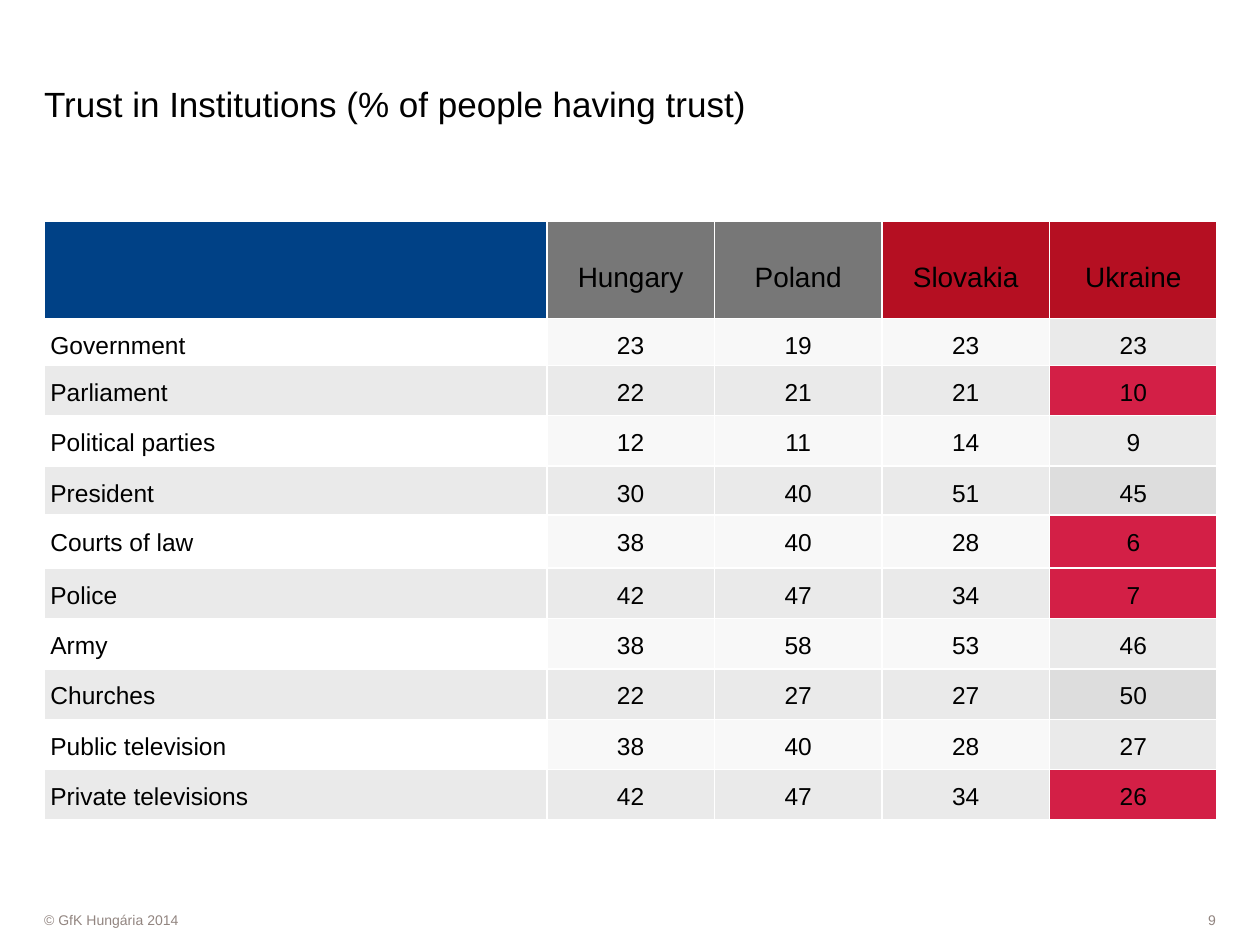
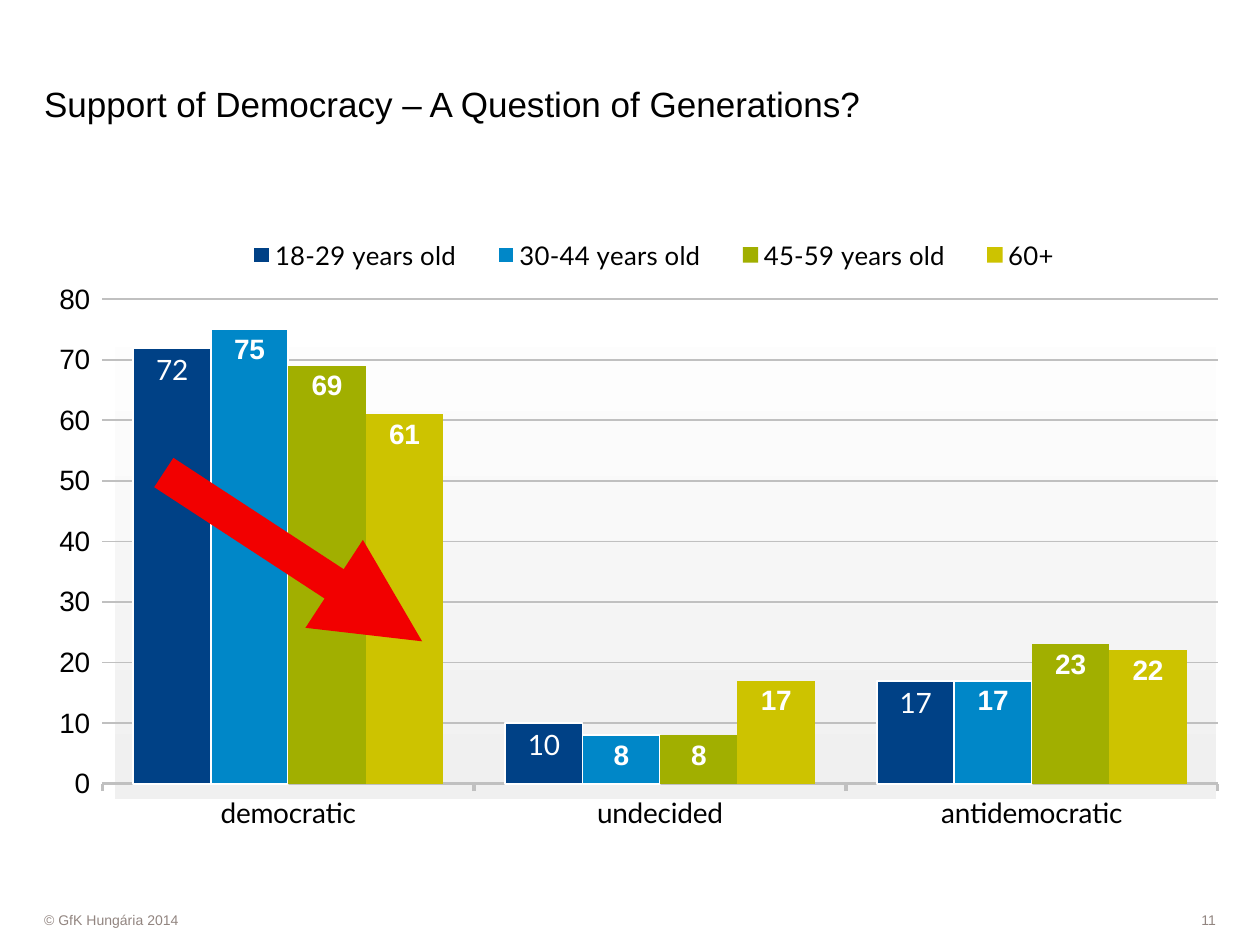
import pptx
import pptx.chart.data
import pptx.dml.color
import pptx.enum.chart
import pptx.enum.shapes
import pptx.enum.text
import pptx.oxml
import pptx.oxml.ns
import pptx.util

Inches, Pt = pptx.util.Inches, pptx.util.Pt
PP_ALIGN = pptx.enum.text.PP_ALIGN
ANCHOR = pptx.enum.text.MSO_ANCHOR
XL = pptx.enum.chart
SHAPE = pptx.enum.shapes.MSO_SHAPE

BLACK, WHITE = "000000", "FFFFFF"
MUTED, LINE_GRAY = "928580", "C0C0C0"
NAVY, GRAY, DARK_RED = "004186", "777777", "B50F22"
ALERT, ARROW_RED = "D31F46", "F20000"


def rgb(value):
    return pptx.dml.color.RGBColor.from_string(value)


def xml(tag, body="", attributes=""):
    names = pptx.oxml.ns.nsdecls("a", "c")
    return pptx.oxml.parse_xml(f"<{tag} {names} {attributes}>{body}</{tag}>")


class Deck:
    font = "Arial"
    left = 0.35

    def __init__(self):
        self.presentation = pptx.Presentation()
        self.presentation.slide_width = Inches(10)
        self.presentation.slide_height = Inches(7.5)
        self.slide = None

    def style(self, font, size, color=BLACK, name=None, bold=False):
        font.name = name or self.font
        font.size = Pt(size)
        font.bold = bold
        font.color.rgb = rgb(color)

    def frame(self, text_frame, text, size, color, align, anchor):
        text_frame.text = text
        text_frame.word_wrap = True
        text_frame.auto_size = pptx.enum.text.MSO_AUTO_SIZE.NONE
        text_frame.vertical_anchor = anchor
        text_frame.margin_left = text_frame.margin_right = 0
        text_frame.margin_top = text_frame.margin_bottom = 0
        paragraph = text_frame.paragraphs[0]
        paragraph.alignment = align
        self.style(paragraph.runs[0].font, size, color)

    def new_slide(self, title, number):
        layout = self.presentation.slide_layouts[5]
        self.slide = self.presentation.slides.add_slide(layout)
        heading = self.slide.shapes.title
        heading.left, heading.top = Inches(self.left), Inches(0.28)
        heading.width, heading.height = Inches(6.93), Inches(0.71)
        self.frame(heading.text_frame, title, 20, BLACK, PP_ALIGN.LEFT, ANCHOR.BOTTOM)
        self.footer(8.23, 1.42, str(number), PP_ALIGN.RIGHT)
        self.footer(self.left, 7.72, "© GfK Hungária 2014", PP_ALIGN.LEFT)

    def rectangle(self, left, top, width, height):
        shape = self.slide.shapes.add_shape(
            SHAPE.RECTANGLE, Inches(left), Inches(top), Inches(width), Inches(height))
        shape.shadow.inherit = False
        shape.line.fill.background()
        return shape

    def footer(self, left, width, text, align):
        band = self.rectangle(left, 7.22, width, 0.16)
        band.fill.solid()
        band.fill.fore_color.rgb = rgb(WHITE)
        self.frame(band.text_frame, text, 8, MUTED, align, ANCHOR.MIDDLE)

    def gradient_panel(self, left, top, width, height, bottom, upper):
        panel = self.rectangle(left, top, width, height)
        panel.fill.gradient()
        panel.fill.gradient_angle = 90
        for stop, (place, color) in zip(panel.fill.gradient_stops, ((0, bottom), (1, upper))):
            stop.position = place
            stop.color.rgb = rgb(color)

    def cell(self, cell, text, fill, size, align, anchor):
        properties = cell._tc.get_or_add_tcPr()
        for side in ("lnL", "lnR", "lnT", "lnB"):
            properties.append(xml(
                f"a:{side}", f'<a:solidFill><a:srgbClr val="{WHITE}"/></a:solidFill>', 'w="12700"'))
        cell.fill.solid()
        cell.fill.fore_color.rgb = rgb(fill)
        cell.margin_left = cell.margin_right = Inches(0.05)
        cell.margin_top = cell.margin_bottom = 0
        cell.vertical_anchor = anchor
        if text:
            cell.text = text
            paragraph = cell.text_frame.paragraphs[0]
            paragraph.alignment = align
            paragraph.line_spacing = 1.5
            self.style(paragraph.runs[0].font, size)

    def table(self, left, top, widths, heights, rows, fill_of):
        table = self.slide.shapes.add_table(
            len(heights), len(widths), Inches(left), Inches(top),
            Inches(sum(widths)), Inches(sum(heights))).table
        table.horz_banding = False
        for column, width in zip(table.columns, widths):
            column.width = Inches(width)
        for row, height in zip(table.rows, heights):
            row.height = Inches(height)
        for r, values in enumerate(rows):
            for c, value in enumerate(values):
                self.cell(table.cell(r, c), str(value), fill_of(r, c),
                          14 if r else 16,
                          PP_ALIGN.CENTER if c else PP_ALIGN.LEFT,
                          ANCHOR.TOP if r else ANCHOR.MIDDLE)

    def layout(self, element, x, y, width, height, inner=False):
        for old in element.findall(pptx.oxml.ns.qn("c:layout")):
            element.remove(old)
        parts = '<c:layoutTarget val="inner"/>' if inner else ""
        parts += '<c:xMode val="edge"/><c:yMode val="edge"/>'
        for tag, value in zip("xywh", (x, y, width, height)):
            parts += f'<c:{tag} val="{value}"/>'
        return xml("c:layout", f"<c:manualLayout>{parts}</c:manualLayout>")

    def column_chart(self, left, top, width, height, categories, series):
        data = pptx.chart.data.CategoryChartData(number_format="0")
        data.categories = categories
        for name, values, *_ in series:
            data.add_series(name, values)
        chart = self.slide.shapes.add_chart(
            XL.XL_CHART_TYPE.COLUMN_CLUSTERED, Inches(left), Inches(top),
            Inches(width), Inches(height), data).chart
        chart.has_title = False
        self.style(chart.font, 16, name="Lato")

        chart.has_legend = True
        legend = chart.legend
        legend.position = XL.XL_LEGEND_POSITION.TOP
        legend.include_in_layout = False
        self.style(legend.font, 14.7, name="Lato")
        legend._element.find(pptx.oxml.ns.qn("c:legendPos")).addnext(
            self.layout(legend._element, 0.16, 0.02, 0.72, 0.08))
        plot_area = chart._chartSpace.chart.plotArea
        plot_area.insert(0, self.layout(plot_area, 0.062, 0.13, 0.926, 0.763, True))

        category_axis, value_axis = chart.category_axis, chart.value_axis
        self.style(category_axis.tick_labels.font, 16, name="Lato")
        category_axis.major_tick_mark = XL.XL_TICK_MARK.OUTSIDE
        self.line(category_axis.format.line, LINE_GRAY, 2)
        self.style(value_axis.tick_labels.font, 16)
        value_axis.minimum_scale, value_axis.maximum_scale = 0, 80
        value_axis.major_unit = 10
        value_axis.format.line.fill.background()
        self.line(value_axis.major_gridlines.format.line, LINE_GRAY, 1)

        plot = chart.plots[0]
        plot.gap_width, plot.overlap = 80, 0
        plot.vary_by_categories = False
        for bars, (_, _, color, outlined, label_font) in zip(plot.series, series):
            bars.format.fill.solid()
            bars.format.fill.fore_color.rgb = rgb(color)
            if outlined:
                self.line(bars.format.line, WHITE, 1)
            labels = bars.data_labels
            labels.show_value = True
            labels.position = XL.XL_LABEL_POSITION.INSIDE_END
            labels.number_format = "0"
            labels.number_format_is_linked = False
            self.style(labels.font, 16, WHITE, label_font, label_font == "Arial")

    def line(self, line, color, width):
        line.color.rgb = rgb(color)
        line.width = Pt(width)

    def arrow(self, x1, y1, x2, y2, color, width):
        connector = self.slide.shapes.add_connector(
            pptx.enum.shapes.MSO_CONNECTOR.STRAIGHT,
            Inches(x1), Inches(y1), Inches(x2), Inches(y2))
        self.line(connector.line, color, width)
        connector.line._get_or_add_ln().append(xml("a:tailEnd", attributes='type="triangle"'))
        connector._element.spPr.append(xml("a:effectLst"))


TRUST = [
    ("", "Hungary", "Poland", "Slovakia", "Ukraine"),
    ("Government", 23, 19, 23, 23),
    ("Parliament", 22, 21, 21, 10),
    ("Political parties", 12, 11, 14, 9),
    ("President", 30, 40, 51, 45),
    ("Courts of law", 38, 40, 28, 6),
    ("Police", 42, 47, 34, 7),
    ("Army", 38, 58, 53, 46),
    ("Churches", 22, 27, 27, 50),
    ("Public television", 38, 40, 28, 27),
    ("Private televisions", 42, 47, 34, 26),
]
HEADER_FILLS = (NAVY, GRAY, GRAY, DARK_RED, DARK_RED)
ODD_FILLS = (WHITE, "F8F8F8", "F8F8F8", "F8F8F8", "EAEAEA")
EVEN_FILLS = ("EAEAEA",) * 4 + ("DDDDDD",)
LOW_TRUST = {"Parliament", "Courts of law", "Police", "Private televisions"}

GENERATIONS = [
    ("18-29 years old", (72, 10, 17), NAVY, True, "Lato"),
    ("30-44 years old", (75, 8, 17), "0087C8", True, "Arial"),
    ("45-59 years old", (69, 8, 23), "A1AF00", False, "Arial"),
    ("60+", (61, 17, 22), "CDC300", False, "Arial"),
]


def trust_fill(row, column):
    if row == 0:
        return HEADER_FILLS[column]
    if column == 4 and TRUST[row][0] in LOW_TRUST:
        return ALERT
    return (ODD_FILLS if row % 2 else EVEN_FILLS)[column]


def main():
    deck = Deck()

    deck.new_slide("Trust in Institutions (% of people having trust)", 9)
    row_heights = [0.77, 0.37, 0.4, 0.4, 0.39, 0.42] + [0.4] * 5
    deck.table(deck.left, 1.76, [3.99] + [1.33] * 4, row_heights, TRUST, trust_fill)

    deck.new_slide("Support of Democracy – A Question of Generations?", 11)
    deck.gradient_panel(0.91, 2.24, 8.74, 4.1, "F0F0F0", WHITE)
    deck.column_chart(0.22, 1.72, 9.56, 5.04,
                      ("democratic", "undecided", "antidemocratic"), GENERATIONS)
    deck.arrow(1.3, 3.75, 3.35, 5.09, ARROW_RED, 20)

    deck.presentation.save("out.pptx")


if __name__ == "__main__":
    main()
